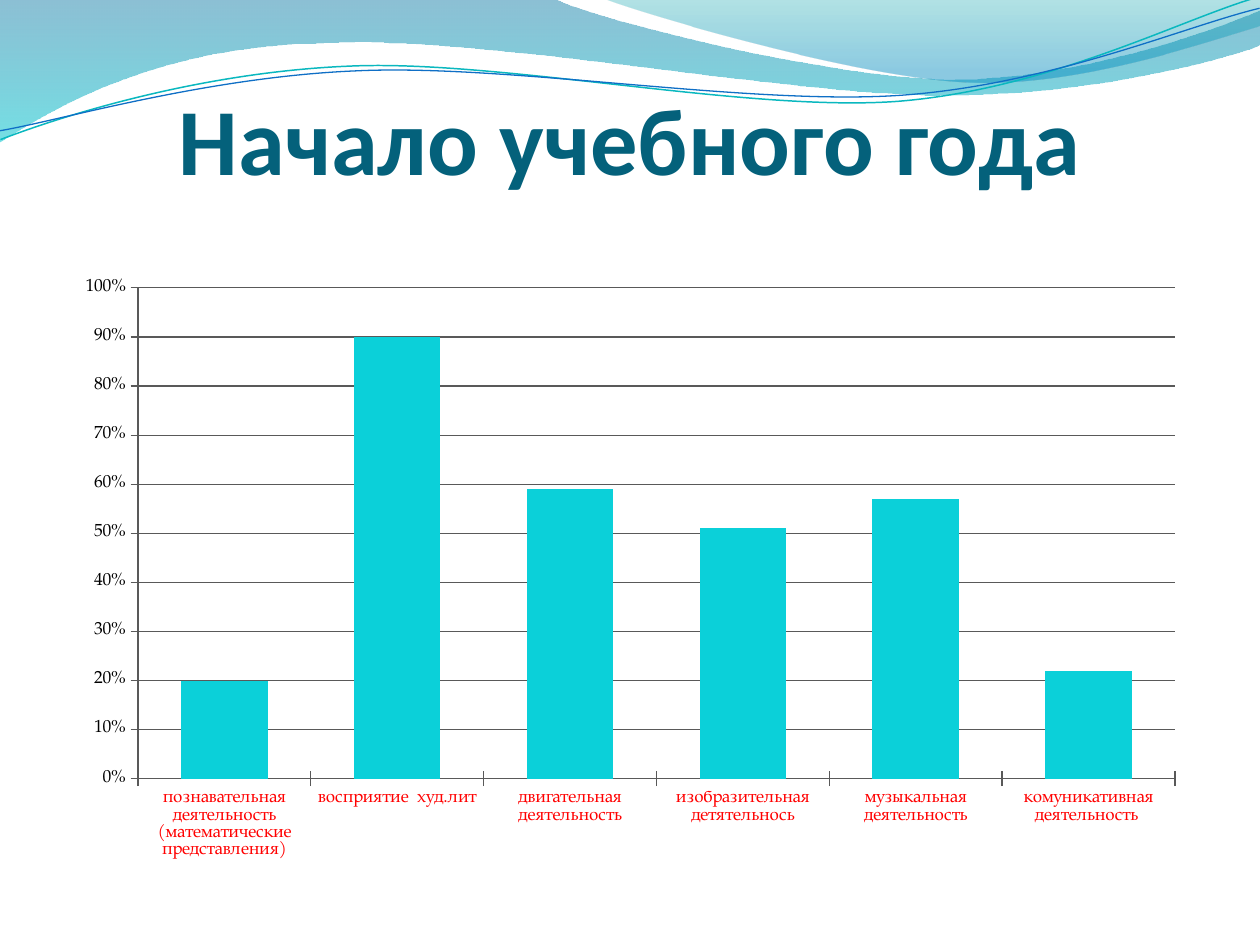
from lxml import etree
from pptx import Presentation
from pptx.chart.data import CategoryChartData
from pptx.dml.color import RGBColor
from pptx.enum.chart import XL_CHART_TYPE, XL_TICK_MARK
from pptx.enum.text import MSO_ANCHOR, PP_ALIGN
from pptx.oxml.ns import qn
from pptx.util import Emu, Pt

COLUMN = XL_CHART_TYPE.COLUMN_CLUSTERED
TICK_CROSS = XL_TICK_MARK.CROSS
BOTTOM = MSO_ANCHOR.BOTTOM
CENTER = PP_ALIGN.CENTER
SCALE = 914400 / 126


def rgb(color):
    return RGBColor.from_string(color)


def add_curve(shapes, segments, close):
    """Two numbers are a straight segment's end, six are a Bezier curve."""
    points = [(round(seg[i] * SCALE), round(seg[i + 1] * SCALE))
              for seg in segments for i in range(0, len(seg), 2)]
    builder = shapes.build_freeform(*points[0], scale=1.0)
    builder.add_line_segments(points[1:], close=close)
    sp = builder.convert_to_shape()
    sp.shadow.inherit = False
    # Gather each curve's three points into one Bezier segment
    steps = iter(list(sp._element.iter(qn("a:lnTo"))))
    for seg in segments[1:]:
        group = [next(steps) for _ in range(len(seg) // 2)]
        if len(group) == 3:
            curve = etree.Element(qn("a:cubicBezTo"))
            group[0].addprevious(curve)
            for step in group:
                curve.append(step[0])
                step.getparent().remove(step)
    return sp


prs = Presentation()
prs.slide_width = Emu(round(1260 * SCALE))
prs.slide_height = Emu(round(945 * SCALE))
s = prs.slides.add_slide(prs.slide_layouts[6])

# Translucent waves: outline, then (position, colour, opacity) stops
waves = [
    ([(0, 0), (554, -1), (600, 21, 837, 79, 955, 79),
      (1075, 79, 1207, 33, 1260, 11), (1261, 45),
      (1239, 55, 1096, 96, 940, 95), (784, 95, 481, 35, 324, 43),
      (163, 45, 58, 105, -1, 142)],
     [(0, "0074A1", 45), (1, "00C6CF", 55)]),
    ([(604, -1), (641, 14, 859, 78, 969, 82),
      (1079, 87, 1211, 40, 1260, 26), (1260, 0)],
     [(0, "00A1A9", 30), (0.8, "008BBF", 45)]),
]
for segments, stops in waves:
    sp = add_curve(s.shapes, segments, True)
    sp.line.fill.background()
    sp.fill.gradient()
    sp.fill.gradient_angle = 270
    for stop, (position, color, opacity) in zip(sp.fill.gradient_stops, stops):
        stop.position = position
        stop.color.rgb = rgb(color)
    for clr, stop in zip(sp._element.spPr.iter(qn("a:srgbClr")), stops):
        etree.SubElement(clr, qn("a:alpha")).set("val", str(stop[2] * 1000))

# Thin wave lines, slightly turned
lines = [
    ([(-2, 110), (58, 90, 199, 52, 350, 53), (499, 53, 745, 118, 896, 114),
      (1049, 109, 1184, 45, 1260, 27)], "0AB8BF", 0.85),
    ([(-2, 101), (57, 94, 207, 57, 357, 58), (509, 58, 750, 112, 902, 108),
      (1052, 104, 1188, 52, 1262, 38)], "0F6FC6", 0.75),
]
for segments, color, width in lines:
    sp = add_curve(s.shapes, segments, False)
    sp.rotation = 357.3
    sp.fill.background()
    sp.line.color.rgb = rgb(color)
    sp.line.width = Pt(width)

# Title
box = [Emu(round(n * SCALE)) for n in (63, 96, 1134, 98)]
tf = s.shapes.add_textbox(*box).text_frame
tf.word_wrap = True
tf.vertical_anchor = BOTTOM
tf.margin_left = tf.margin_right = tf.margin_bottom = 0
p = tf.paragraphs[0]
p.text = "Начало учебного года"
p.alignment = CENTER
font = p.runs[0].font
font.name, font.size, font.bold = "Calibri", Pt(54), True
font.color.rgb = rgb("04617B")

# Column chart
data = CategoryChartData(number_format="0%")
data.categories = [
    "познавательная деятельность (математические представления)",
    "восприятие  худ.лит",
    "двигательная деятельность",
    "изобразительная детятельнось",
    "музыкальная деятельность",
    "комуникативная деятельность ",
]
data.add_series("Series 1", (0.2, 0.9, 0.59, 0.51, 0.57, 0.22))
box = [Emu(round(n * SCALE)) for n in (63, 267, 1134, 605)]
chart = s.shapes.add_chart(COLUMN, *box, data).chart
chart.has_legend = False
chart.has_title = False
chart.font.name = "TeX Gyre Pagella"
chart.font.size = Pt(10)
chart.font.color.rgb = rgb("000000")

plot = chart.plots[0]
plot.gap_width = 100
plot.vary_by_categories = False
fill = plot.series[0].format.fill
fill.solid()
fill.fore_color.rgb = rgb("0BD0D9")

# Axes
cat_axis, val_axis = chart.category_axis, chart.value_axis
val_axis.has_major_gridlines = True
for axis in (cat_axis, val_axis):
    axis.major_tick_mark = TICK_CROSS
for part in (cat_axis, val_axis, val_axis.major_gridlines):
    part.format.line.color.rgb = rgb("595959")
    part.format.line.width = Pt(0.72)
cat_axis.tick_labels.font.color.rgb = rgb("FF0000")
cat_axis.tick_labels.font.size = Pt(10)
cat_axis.tick_labels.font.name = "TeX Gyre Pagella"
val_axis.tick_labels.number_format = "0%"
val_axis.tick_labels.number_format_is_linked = False

# Plot area position, as shares of the chart
area = chart._chartSpace.chart.plotArea
for old in area.findall(qn("c:layout")):
    area.remove(old)
layout = etree.Element(qn("c:layout"))
area.insert(0, layout)
manual = etree.SubElement(layout, qn("c:manualLayout"))
for tag, val in (("layoutTarget", "inner"), ("xMode", "edge"),
                 ("yMode", "edge"), ("x", 75 / 1134), ("y", 21 / 605),
                 ("w", 1037 / 1134), ("h", 491 / 605)):
    etree.SubElement(manual, qn("c:" + tag)).set("val", str(val))

prs.save("out.pptx")
